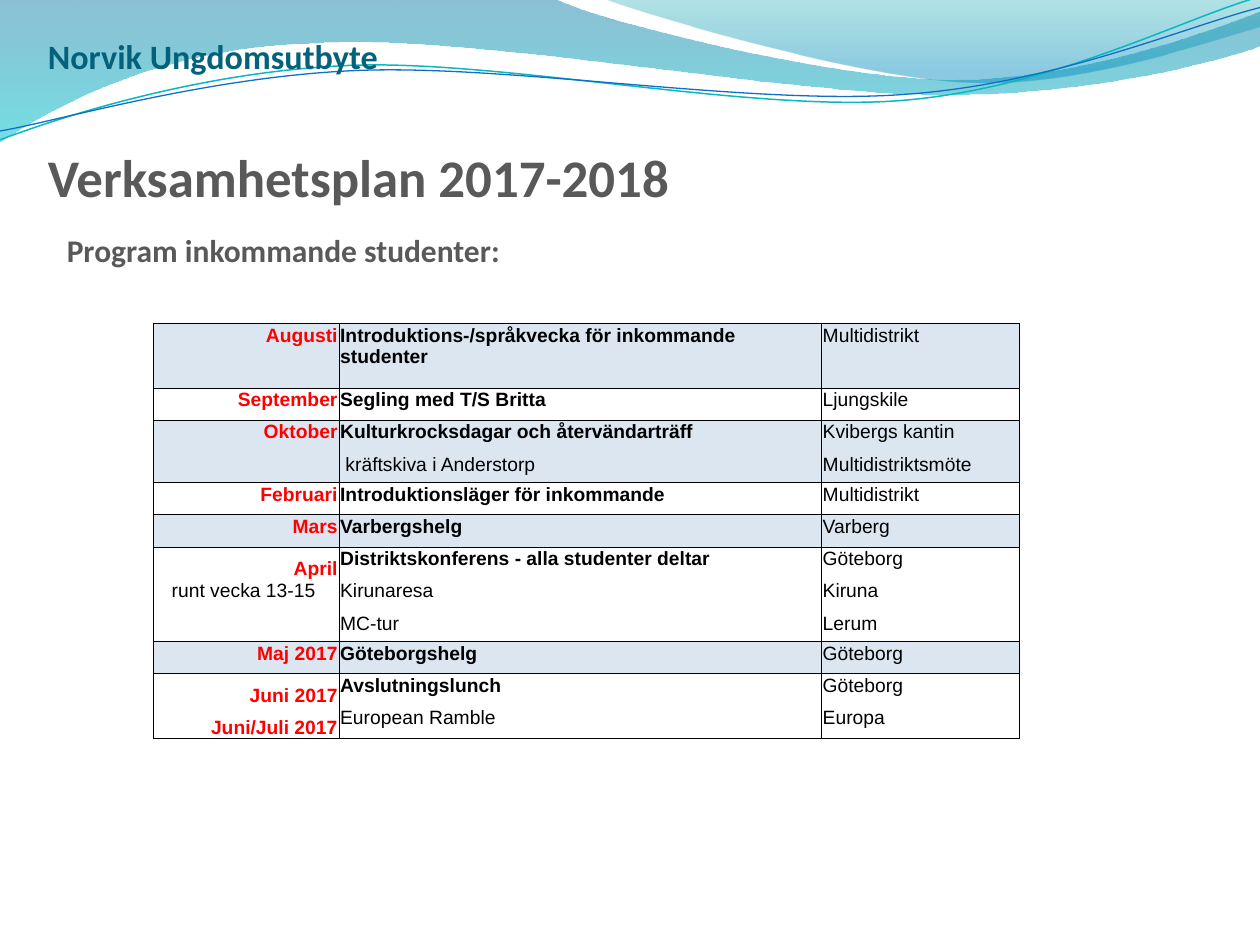
from lxml import etree
from pptx import Presentation, util as u
from pptx.dml.color import RGBColor
from pptx.enum import text
from pptx.oxml.ns import qn

WIDE, HIGH = 10, 7.5
COLS = (1.47, 3.83, 1.57)
TALL, LAST, TOTAL = 0.51, 0.24, 3.29
TINTS = ("DCE6F1", "FFFFFF")
LEFT, MID, RIGHT = text.PP_ALIGN.LEFT, text.PP_ALIGN.CENTER, text.PP_ALIGN.RIGHT
NOTE = "runt vecka 13-15 "

# Each group of rows shares one tint and one frame.
PLAN = [
    [("Augusti", "Introduktions-/språkvecka för inkommande studenter", "Multidistrikt")],
    [("September", "Segling med T/S Britta", "Ljungskile")],
    [("Oktober", "Kulturkrocksdagar och återvändarträff", "Kvibergs kantin"),
     ("", " kräftskiva i Anderstorp", "Multidistriktsmöte")],
    [("Februari", "Introduktionsläger för inkommande", "Multidistrikt")],
    [("Mars", "Varbergshelg", "Varberg")],
    [("April", "Distriktskonferens - alla studenter deltar", "Göteborg"),
     (NOTE, "Kirunaresa", "Kiruna"),
     ("", "MC-tur", "Lerum")],
    [("Maj 2017", "Göteborgshelg", "Göteborg")],
    [("Juni 2017", "Avslutningslunch", "Göteborg"),
     ("Juni/Juli 2017", "European Ramble", "Europa")],
]
LOW = ("April", "Juni 2017", "Juni/Juli 2017")

# Start point, then steps: one point is a line, three points are a curve.
BAND = [(0, 0), [(4.4, -0.01)],
        [(4.76, 0.17), (6.64, 0.63), (7.58, 0.63)],
        [(8.53, 0.63), (9.58, 0.26), (10, 0.09)], [(10.01, 0.36)],
        [(9.83, 0.44), (8.7, 0.76), (7.46, 0.75)],
        [(6.22, 0.75), (3.82, 0.28), (2.57, 0.34)],
        [(1.29, 0.36), (0.46, 0.83), (-0.01, 1.13)], [(0, 0)]]
CREST = [(4.79, -0.01), [(5.09, 0.11), (6.82, 0.62), (7.69, 0.65)],
         [(8.56, 0.69), (9.61, 0.32), (10, 0.21)], [(10, 0)], [(4.79, -0.01)]]
TEAL = [(0, 1.11), [(0.48, 0.93), (1.58, 0.57), (2.77, 0.52)],
        [(3.95, 0.47), (5.93, 0.89), (7.13, 0.8)],
        [(8.33, 0.71), (9.38, 0.15), (9.98, -0.02)]]
BLUE = [(0, 1.04), [(0.47, 0.96), (1.64, 0.61), (2.83, 0.56)],
        [(4.03, 0.51), (5.97, 0.84), (7.17, 0.75)],
        [(8.36, 0.67), (9.41, 0.21), (10, 0.06)]]


def paint(code):
    return RGBColor.from_string(code)


def style(para, size, code, face, bold=False):
    for run in para.runs:
        font = run.font
        font.size, font.name, font.bold = u.Pt(size), face, bold
        font.color.rgb = paint(code)


def draw(slide, steps, close):
    """Build the outline, then join each three points into one curve."""
    start, *moves = steps
    points = [(u.Inches(x), u.Inches(y)) for move in moves for x, y in move]
    pen = slide.shapes.build_freeform(*map(u.Inches, start))
    pen.add_line_segments(points, close=close)
    shape = pen.convert_to_shape()
    shape.shadow.inherit = False
    lines = iter(list(shape._element.iter(qn("a:lnTo"))))
    for move in moves:
        group = [next(lines) for _ in move]
        if len(group) == 3:
            curve = etree.Element(qn("a:cubicBezTo"))
            group[0].addprevious(curve)
            for line in group:
                curve.append(line[0])
                line.getparent().remove(line)
    return shape


def wave(slide, steps, stops):
    """Draw a filled wave; stops hold colour, position and opacity."""
    shape = draw(slide, steps, True)
    shape.line.fill.background()
    shape.fill.gradient()
    shape.fill.gradient_angle = 270
    for stop, (code, spot, _) in zip(shape.fill.gradient_stops, stops):
        stop.color.rgb = paint(code)
        stop.position = spot
    tags = shape._element.iter(qn("a:srgbClr"))
    for tag, (_, _, alpha) in zip(tags, stops):
        etree.SubElement(tag, qn("a:alpha"), val=str(alpha * 1000))


def thread(slide, steps, code, width):
    shape = draw(slide, steps, False)
    shape.fill.background()
    shape.line.color.rgb = paint(code)
    shape.line.width = u.Pt(width)


def place(slide, holder, box, anchor):
    """Move a placeholder to its box, in front of the waves."""
    holder.left, holder.top, holder.width, holder.height = map(u.Inches, box)
    frame = holder.text_frame
    frame.word_wrap = True
    frame.auto_size = text.MSO_AUTO_SIZE.NONE
    frame.vertical_anchor = anchor
    slide.shapes._spTree.append(holder._element)
    return frame


def head(slide):
    frame = place(slide, slide.shapes.title, (0.28, 0.22, 9.13, 1.49),
                  text.MSO_ANCHOR.MIDDLE)
    frame.text = "Norvik Ungdomsutbyte\nVerksamhetsplan 2017-2018"
    first, second = frame.paragraphs
    first.alignment = second.alignment = LEFT
    second.space_before = u.Pt(39)
    style(first, 19.5, "04617B", "Calibri", True)
    style(second, 30.2, "595959", "Calibri", True)


def lead(slide):
    frame = place(slide, slide.placeholders[1], (0.43, 1.78, 8.74, 0.4),
                  text.MSO_ANCHOR.TOP)
    frame.text = "Program inkommande studenter:"
    para = frame.paragraphs[0]
    props = para._p.get_or_add_pPr()
    props.set("marL", str(u.Inches(0.38)))
    props.set("indent", str(u.Inches(-0.38)))
    etree.SubElement(props, qn("a:buNone"))
    para.space_before = u.Pt(0)
    style(para, 18, "595959", "Calibri", True)


def edge(cell, first, last):
    """Border the cell, leaving the seams inside a group open."""
    props = cell._tc.get_or_add_tcPr()
    for side, shown in (("L", True), ("R", True), ("T", first), ("B", last)):
        line = etree.SubElement(props, qn("a:ln" + side), w=str(u.Pt(0.5)))
        if shown:
            fill = etree.SubElement(line, qn("a:solidFill"))
            etree.SubElement(fill, qn("a:srgbClr"), val="000000")
        else:
            etree.SubElement(line, qn("a:noFill"))


def write(cell, words, col, first):
    cell.margin_left = cell.margin_right = cell.margin_top = u.Inches(0.01)
    cell.margin_bottom = 0
    if words in LOW:
        cell.vertical_anchor = text.MSO_ANCHOR.BOTTOM
    para = cell.text_frame.paragraphs[0]
    if not words:
        etree.SubElement(para._p, qn("a:endParaRPr"), sz="1100")
        return
    para.text = words
    month = col == 0 and words != NOTE
    para.alignment = RIGHT if month else MID if col == 0 else LEFT
    style(para, 11, "FF0000" if month else "000000", "Arial",
          month or (col == 1 and first))


def grid(slide):
    lines = [line for group in PLAN for line in group]
    bare = sum(not line[0] for line in lines)
    even = (TOTAL - TALL - LAST * bare) / (len(lines) - 1 - bare)
    table = slide.shapes.add_table(len(lines), len(COLS), *map(
        u.Inches, (1.22, 2.57, sum(COLS), TOTAL))).table
    table.first_row = table.horz_banding = False
    for col, width in zip(table.columns, COLS):
        col.width = u.Inches(width)
    row = 0
    for turn, group in enumerate(PLAN):
        for i, line in enumerate(group):
            high = TALL if row == 0 else even if line[0] else LAST
            table.rows[row].height = u.Inches(high)
            for col, words in enumerate(line):
                cell = table.cell(row, col)
                edge(cell, i == 0, i == len(group) - 1)
                cell.fill.solid()
                cell.fill.fore_color.rgb = paint(TINTS[turn % 2])
                write(cell, words, col, i == 0)
            row += 1


def main():
    deck = Presentation()
    deck.slide_width, deck.slide_height = u.Inches(WIDE), u.Inches(HIGH)
    slide = deck.slides.add_slide(deck.slide_layouts[1])
    wave(slide, BAND, [("0074A1", 0, 45), ("00C6CF", 1, 55)])
    wave(slide, CREST, [("00A1A9", 0, 30), ("008BBF", 0.8, 45)])
    thread(slide, TEAL, "0AB8BF", 0.85)
    thread(slide, BLUE, "0F6FC6", 0.75)
    head(slide)
    lead(slide)
    grid(slide)
    deck.save("out.pptx")


if __name__ == "__main__":
    main()
